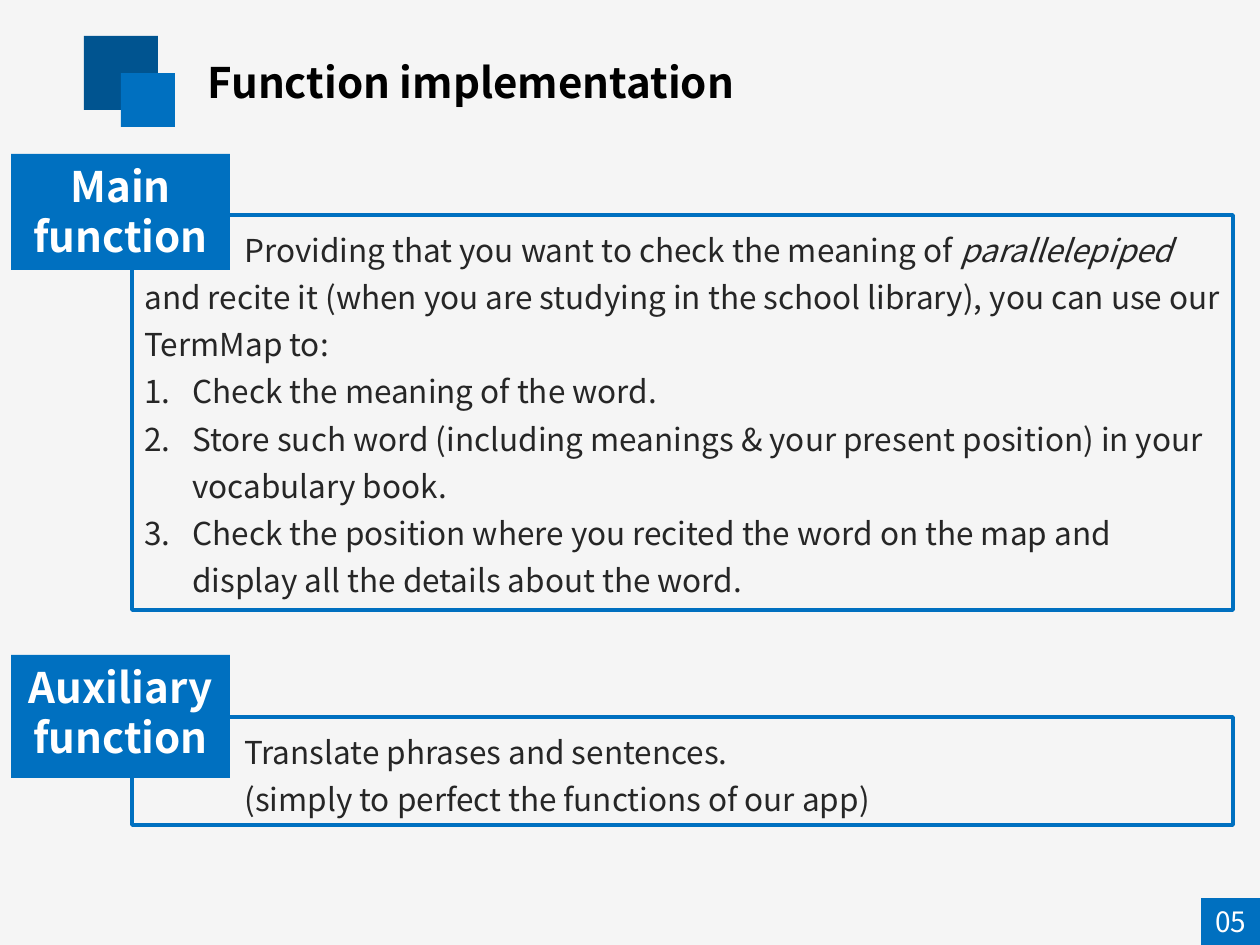
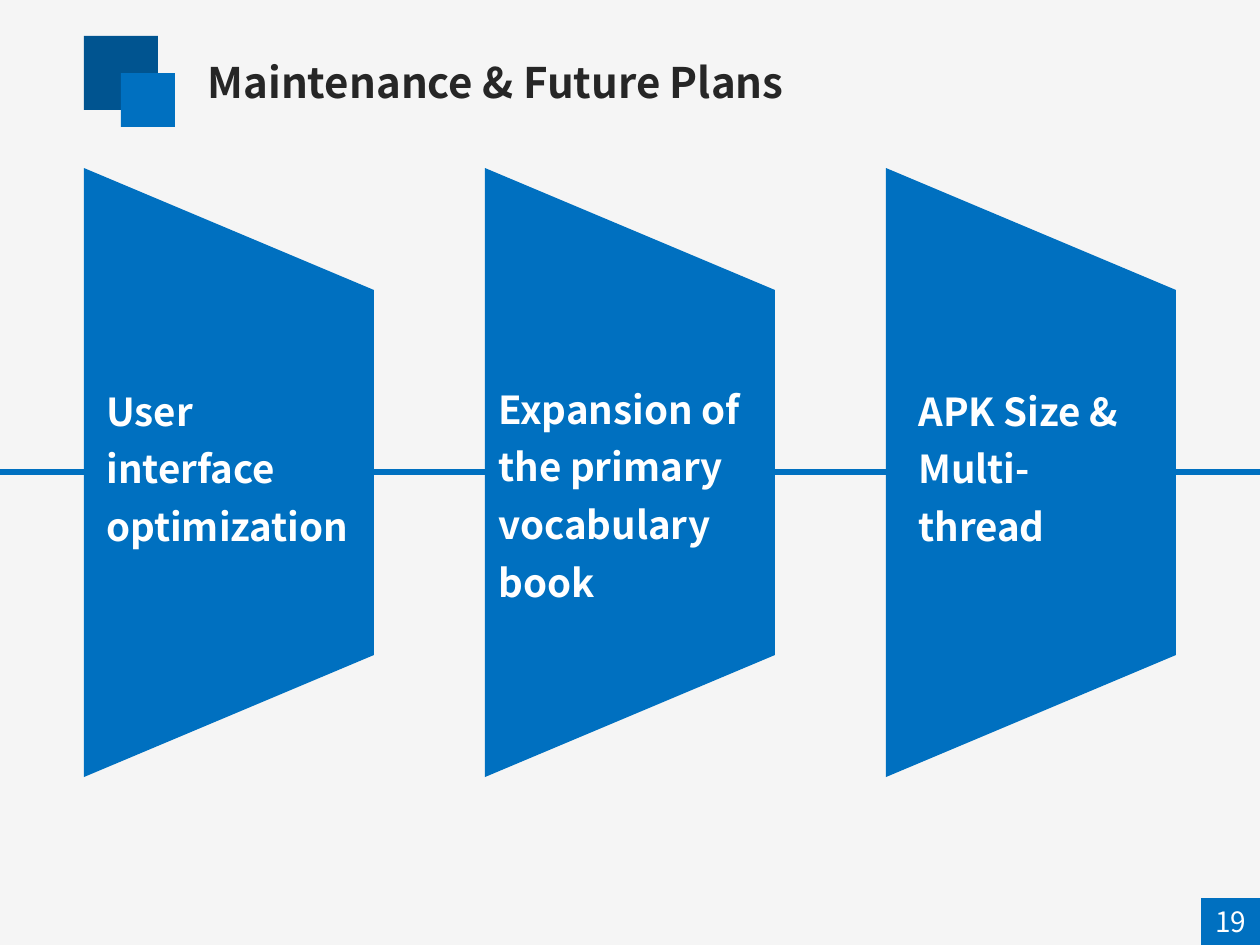
"""Build two app-presentation slides: function overview and future plans."""
from dataclasses import dataclass

from lxml.etree import SubElement
from pptx import Presentation
from pptx.dml.color import RGBColor
from pptx.enum.shapes import MSO_CONNECTOR, MSO_SHAPE
from pptx.enum.text import MSO_ANCHOR, PP_ALIGN
from pptx.oxml.ns import qn
from pptx.util import Pt

EMU_PER_PX = 914400 / 126
COLOURS = {
    "background": "F5F5F5",
    "dark": "005490",
    "accent": "0070C0",
    "text": "262626",
    "black": "000000",
    "white": "FFFFFF",
}
FONT = "Noto Sans CJK SC"
FORMATS = {
    "title": {"name": FONT, "size": Pt(24), "bold": True},
    "label": {"name": FONT, "size": Pt(24), "bold": True},
    "body": {"name": FONT, "size": Pt(18), "bold": False},
    "plan": {"name": FONT, "size": Pt(22), "bold": True},
    "number": {"name": FONT, "size": Pt(16), "bold": False},
}


@dataclass(frozen=True)
class Area:
    left: int
    top: int
    width: int
    height: int

    def emu(self) -> list[int]:
        return [px(n) for n in (self.left, self.top, self.width, self.height)]


@dataclass(frozen=True)
class Span:
    text: str
    italic: bool = False


@dataclass(frozen=True)
class Para:
    spans: tuple[Span, ...]
    margin: int = 0
    indent: int = 0
    numbered: bool = False


@dataclass(frozen=True)
class Section:
    label: tuple[str, ...]
    label_area: Area
    body: tuple[Para, ...]
    body_area: Area


@dataclass(frozen=True)
class Plan:
    lines: tuple[str, ...]
    text_area: Area


def plain(*lines: str, indent: int = 0) -> tuple[Para, ...]:
    return tuple(Para((Span(line),), indent=indent) for line in lines)


def step(text: str) -> Para:
    return Para((Span(text),), margin=48, indent=-48, numbered=True)


EMBLEM = ((Area(84, 36, 74, 74), "dark"), (Area(121, 73, 54, 54), "accent"))
TITLE_AREA = Area(195, 50, 980, 63)
NUMBER_AREA = Area(1201, 898, 59, 47)
SECTIONS = (
    Section(
        ("Main function",),
        Area(11, 154, 219, 116),
        (
            Para(
                (
                    Span("Providing that you want to check the meaning of "),
                    Span("parallelepiped", italic=True),
                    Span(" and recite it (when you are studying in the school "
                         "library), you can use our TermMap to:"),
                ),
                indent=100,
            ),
            step("Check the meaning of the word."),
            step("Store such word (including meanings & your present "
                 "position) in your vocabulary book."),
            step("Check the position where you recited the word on the map "
                 "and display all the details about the word."),
        ),
        Area(132, 215, 1101, 395),
    ),
    Section(
        ("Auxiliary", "function"),
        Area(11, 655, 219, 123),
        plain("Translate phrases and sentences.",
              "(simply to perfect the functions of our app)", indent=100),
        Area(132, 717, 1101, 108),
    ),
)
PLANS = (
    Plan(("User", "interface", "optimization"), Area(52, 370, 624, 188)),
    Plan(("Expansion of", "the primary", "vocabulary", "book"),
         Area(444, 368, 663, 246)),
    Plan(("APK Size &", "Multi-", "thread"), Area(864, 370, 311, 188)),
)
PANEL = Area(84, 168, 290, 609)
PANEL_STEP = 401
PANEL_SLOPE = 122
AXIS_Y = 472


def px(length: int) -> int:
    return round(length * EMU_PER_PX)


def colour(name: str) -> RGBColor:
    return RGBColor.from_string(COLOURS[name])


def write(box, paras: tuple[Para, ...], style: str, colour_name: str,
          align: PP_ALIGN = PP_ALIGN.LEFT, spacing: float = 1.0,
          wrap: bool = True) -> None:
    frame = box.text_frame
    frame.word_wrap = wrap
    frame.vertical_anchor = MSO_ANCHOR.TOP
    for index, para in enumerate(paras):
        target = frame.add_paragraph() if index else frame.paragraphs[0]
        target.alignment = align
        target.line_spacing = spacing
        properties = target._p.get_or_add_pPr()
        properties.set("marL", str(px(para.margin)))
        properties.set("indent", str(px(para.indent)))
        if para.numbered:
            SubElement(properties, qn("a:buAutoNum"), type="arabicPeriod")
        for span in para.spans:
            run = target.add_run()
            run.text = span.text
            for key, value in {**FORMATS[style], "italic": span.italic}.items():
                setattr(run.font, key, value)
            run.font.color.rgb = colour(colour_name)


def paint(shape, fill: str) -> None:
    shape.shadow.inherit = False
    shape.fill.solid()
    shape.fill.fore_color.rgb = colour(fill)
    shape.line.fill.background()


def add_block(page, area: Area, fill: str):
    block = page.shapes.add_shape(MSO_SHAPE.RECTANGLE, *area.emu())
    paint(block, fill)
    return block


def add_page(deck, title: str, title_colour: str, number: str):
    page = deck.slides.add_slide(deck.slide_layouts[5])
    page.background.fill.solid()
    page.background.fill.fore_color.rgb = colour("background")
    for area, fill in EMBLEM:
        add_block(page, area, fill)
    heading = page.shapes.title
    heading.left, heading.top, heading.width, heading.height = TITLE_AREA.emu()
    write(heading, plain(title), "title", title_colour)
    write(add_block(page, NUMBER_AREA, "accent"), plain(number), "number",
          "white", PP_ALIGN.CENTER, wrap=False)
    return page


def add_section(page, section: Section) -> None:
    box = page.shapes.add_shape(MSO_SHAPE.RECTANGLE, *section.body_area.emu())
    box.shadow.inherit = False
    box.fill.background()
    box.line.color.rgb = colour("accent")
    box.line.width = Pt(2)
    write(box, section.body, "body", "text", spacing=1.25)
    label = add_block(page, section.label_area, "accent")
    write(label, plain(*section.label), "label", "white", PP_ALIGN.CENTER)


def add_axis(page, width: int) -> None:
    axis = page.shapes.add_connector(
        MSO_CONNECTOR.STRAIGHT, 0, px(AXIS_Y), width, px(AXIS_Y))
    axis.line.color.rgb = colour("accent")
    axis.line.width = Pt(3)
    SubElement(axis._element.spPr, qn("a:effectLst"))


def add_plan(page, plan: Plan, left: int) -> None:
    right, bottom = left + PANEL.width, PANEL.top + PANEL.height
    builder = page.shapes.build_freeform(left, bottom, scale=EMU_PER_PX)
    builder.add_line_segments((
        (left, PANEL.top),
        (right, PANEL.top + PANEL_SLOPE),
        (right, bottom - PANEL_SLOPE),
    ), close=True)
    paint(builder.convert_to_shape(), "accent")
    box = page.shapes.add_textbox(*plan.text_area.emu())
    write(box, plain(*plan.lines, indent=42), "plan", "white", spacing=1.25)


def main() -> None:
    deck = Presentation()
    deck.slide_width, deck.slide_height = px(1260), px(945)

    functions = add_page(deck, "Function implementation", "black", "05")
    for section in SECTIONS:
        add_section(functions, section)

    future = add_page(deck, "Maintenance & Future Plans", "text", "19")
    add_axis(future, deck.slide_width)
    for index, plan in enumerate(PLANS):
        add_plan(future, plan, PANEL.left + index * PANEL_STEP)

    deck.save("out.pptx")


if __name__ == "__main__":
    main()
